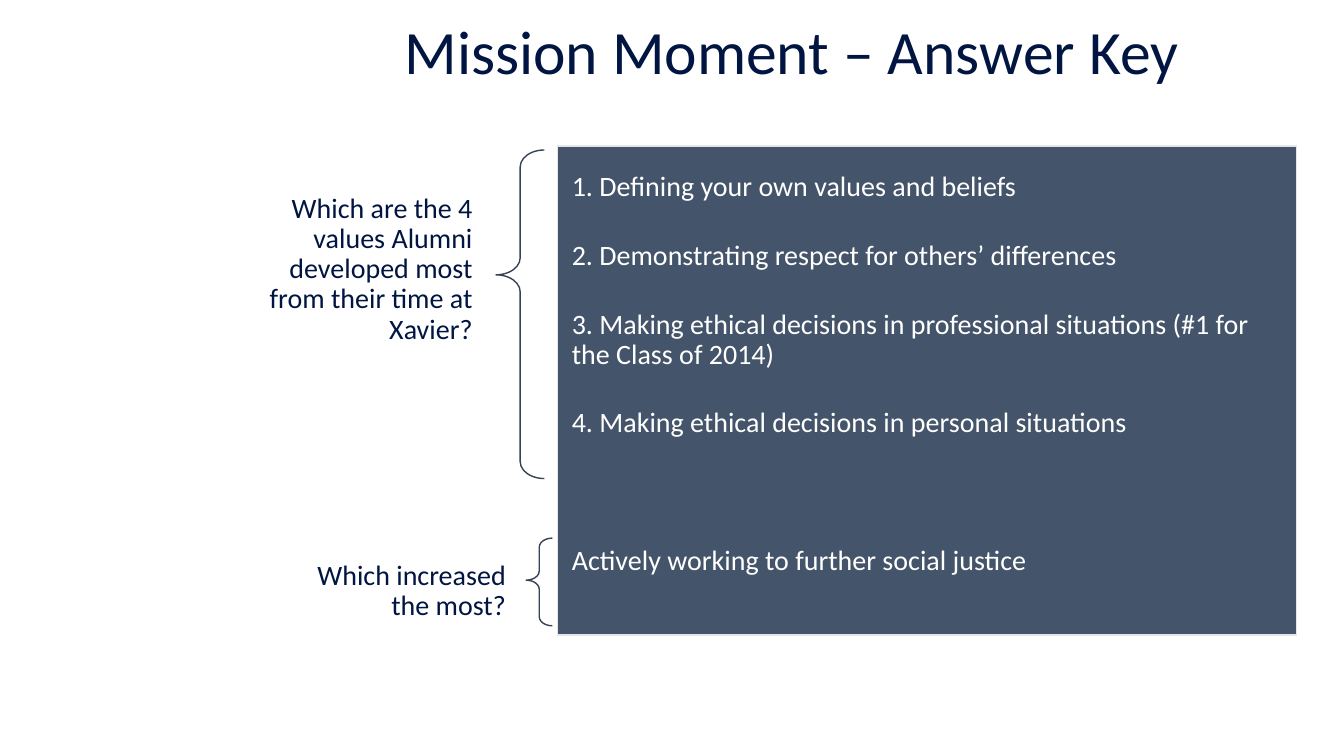
from dataclasses import dataclass

from lxml.etree import SubElement
from pptx import Presentation
from pptx.dml.color import RGBColor
from pptx.enum.shapes import MSO_SHAPE
from pptx.enum.text import MSO_ANCHOR, MSO_AUTO_SIZE, PP_ALIGN
from pptx.oxml.ns import qn
from pptx.util import Cm, Pt


@dataclass(frozen=True)
class Theme:
    navy: RGBColor = RGBColor(0x00, 0x15, 0x41)
    slate: RGBColor = RGBColor(0x44, 0x54, 0x6A)
    brace: RGBColor = RGBColor(0x36, 0x43, 0x55)
    edge: RGBColor = RGBColor(0xE7, 0xE6, 0xE6)
    white: RGBColor = RGBColor(0xFF, 0xFF, 0xFF)
    font: str = "Calibri"
    head: Pt = Pt(44)
    text: Pt = Pt(20)


theme = Theme()


def place(shape, left, top, width, height):
    """Move and size a shape, all lengths in centimetres."""
    shape.left, shape.top = Cm(left), Cm(top)
    shape.width, shape.height = Cm(width), Cm(height)


def write(para, text, size, color, align):
    para.alignment = align
    para.line_spacing = 0.9
    run = para.add_run()
    run.text = text
    run.font.name = theme.font
    run.font.size = size
    run.font.color.rgb = color


deck = Presentation()
deck.slide_width, deck.slide_height = Cm(33.87), Cm(19.05)
slide = deck.slides.add_slide(deck.slide_layouts[1])

# Title
title = slide.shapes.title
place(title, 6.86, 0.33, 26.19, 2.11)
title.text_frame.auto_size = MSO_AUTO_SIZE.NONE
title.text_frame.vertical_anchor = MSO_ANCHOR.MIDDLE
write(title.text_frame.paragraphs[0], "Mission Moment – Answer Key",
      theme.head, theme.navy, PP_ALIGN.CENTER)

# Answers, each with the space before it in points
answers = [
    ("1. Defining your own values and beliefs", 0),
    ("2. Demonstrating respect for others’ differences", 27.4),
    ("3. Making ethical decisions in professional situations "
     "(#1 for the Class of 2014)", 27.4),
    ("4. Making ethical decisions in personal situations", 27.4),
    ("Actively working to further social justice", 76.7),
]
panel = slide.placeholders[1]
place(panel, 14.05, 3.68, 18.62, 12.32)
panel.fill.solid()
panel.fill.fore_color.rgb = theme.slate
panel.line.color.rgb = theme.edge
panel.line.width = Pt(1)
frame = panel.text_frame
frame.auto_size = MSO_AUTO_SIZE.NONE
frame.vertical_anchor = MSO_ANCHOR.TOP
frame.margin_left = frame.margin_right = Cm(0.36)
frame.margin_top = Cm(0.67)
for i, (text, gap) in enumerate(answers):
    para = frame.add_paragraph() if i else frame.paragraphs[0]
    props = para._p.get_or_add_pPr()
    props.set("marL", "0")
    props.set("indent", "0")
    SubElement(props, qn("a:buNone"))
    para.space_before = Pt(gap)
    write(para, text, theme.text, theme.white, PP_ALIGN.LEFT)

# Questions: text, its box, its brace, the brace's point
asks = [
    ("Which are the 4 values Alumni developed most from their time at Xavier?",
     (5.64, 2.44, 6.93, 8.71), (12.5, 3.78, 1.22, 8.28), 0.38),
    ("Which increased the most?",
     (6.78, 12.32, 6.63, 5.16), (13.26, 13.56, 0.66, 2.21), 0.48),
]
for text, box, span, point in asks:
    label = slide.shapes.add_textbox(*map(Cm, box))
    frame = label.text_frame
    frame.word_wrap = True
    frame.vertical_anchor = MSO_ANCHOR.MIDDLE
    frame.margin_left = frame.margin_right = Cm(0.66)
    frame.margin_top = frame.margin_bottom = Cm(0.23)
    write(frame.paragraphs[0], text, theme.text, theme.navy, PP_ALIGN.RIGHT)

    brace = slide.shapes.add_shape(MSO_SHAPE.LEFT_BRACE, *map(Cm, span))
    brace.adjustments[0] = 0.35
    brace.adjustments[1] = point
    brace.shadow.inherit = False
    brace.fill.background()
    brace.line.color.rgb = theme.brace
    brace.line.width = Pt(1)

deck.save("out.pptx")
